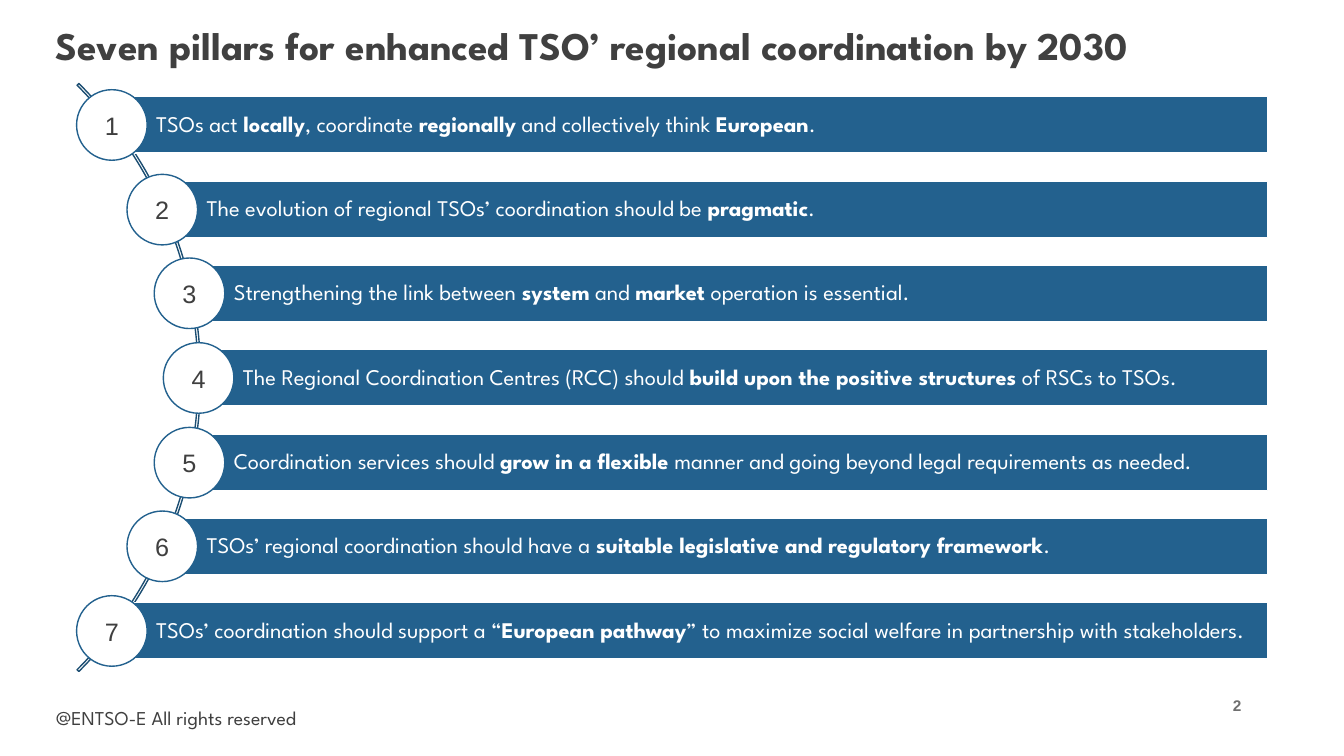
from dataclasses import dataclass
from math import sqrt

from pptx import Presentation
from pptx.dml.color import RGBColor
from pptx.enum.shapes import MSO_SHAPE
from pptx.enum.text import MSO_ANCHOR, MSO_AUTO_SIZE, PP_ALIGN
from pptx.util import Emu, Pt

SCALE = 9144  # EMU in one px, 100 px to the inch


@dataclass(frozen=True)
class Theme:
    blue: str = "23618E"
    navy: str = "1C4E72"
    white: str = "FFFFFF"
    ink: str = "404040"
    dark: str = "3F3F3F"
    gray: str = "6F6F6F"
    sans: str = "League Spartan"
    plain: str = "Arial"
    title: int = 28
    digit: int = 18
    body: int = 16
    foot: int = 14
    page: int = 11


THEME = Theme()

PILLARS = [
    "TSOs act *locally*, coordinate *regionally* and collectively think *European*.",
    "The evolution of regional TSOs’ coordination should be *pragmatic*.",
    "Strengthening the link between *system* and *market* operation is essential.",
    "The Regional Coordination Centres (RCC) should *build upon the positive structures* of RSCs to TSOs.",
    "Coordination services should *grow in a flexible* manner and going beyond legal requirements as needed.",
    "TSOs’ regional coordination should have a *suitable legislative and regulatory framework*.",
    "TSOs’ coordination should support a “*European pathway*” to maximize social welfare in partnership with stakeholders.",
]


def px(num):
    return Emu(round(num) * SCALE)


def write(shape, words, size, color, font=THEME.sans, bold=False,
          align=PP_ALIGN.LEFT, anchor=MSO_ANCHOR.TOP, pad=(10, 5, 10, 5),
          space=1.0):
    """Fill a shape with one paragraph; parts between stars turn bold."""
    frame = shape.text_frame
    frame.word_wrap = True
    frame.auto_size = MSO_AUTO_SIZE.NONE
    frame.vertical_anchor = anchor
    (frame.margin_left, frame.margin_top,
     frame.margin_right, frame.margin_bottom) = map(px, pad)
    para = frame.paragraphs[0]
    para.alignment = align
    para.line_spacing = space
    for i, part in enumerate(words.split("*")):
        run = para.add_run()
        run.text = part
        run.font.name = font
        run.font.size = Pt(size)
        run.font.bold = bold or i % 2 == 1
        run.font.color.rgb = RGBColor.from_string(color)


def draw(slide, kind, box, line, fill=None):
    shape = slide.shapes.add_shape(kind, *map(px, box))
    shape.shadow.inherit = False
    if fill:
        shape.fill.solid()
        shape.fill.fore_color.rgb = RGBColor.from_string(fill)
    else:
        shape.fill.background()
    shape.line.color.rgb = RGBColor.from_string(line)
    shape.line.width = Pt(1)
    return shape


def head(slide, box):
    title = slide.shapes.title
    title.left, title.top, title.width, title.height = map(px, box)
    write(title, "Seven pillars for enhanced TSO’ regional coordination by 2030",
          THEME.title, THEME.ink, bold=True)


def pillars(slide, box):
    """Rows of bars whose numbered discs follow an arc."""
    left, top, width, height = box
    bar, disc, arc, bend = 56, 70, 825, 410
    mid = top + height / 2
    hub = left + disc / 2 - 324  # centre of the arc

    # Arc behind the rows
    curve = draw(slide, MSO_SHAPE.BLOCK_ARC,
                 (hub - arc / 2, mid - arc / 2, arc, arc), THEME.navy)
    for i, value in enumerate((189, 27, 0.003)):
        curve.adjustments[i] = value

    # Bars and discs
    step = (height - disc) / (len(PILLARS) - 1)
    for i, words in enumerate(PILLARS):
        y = top + disc / 2 + i * step
        x = hub + sqrt(bend ** 2 - (y - mid) ** 2)
        strip = draw(slide, MSO_SHAPE.RECTANGLE,
                     (x, y - bar / 2, left + width - x, bar),
                     THEME.white, THEME.blue)
        write(strip, words, THEME.body, THEME.white, space=0.9,
              anchor=MSO_ANCHOR.MIDDLE, pad=(44, 4, 4, 4))
        badge = draw(slide, MSO_SHAPE.OVAL,
                     (x - disc / 2, y - disc / 2, disc, disc),
                     THEME.blue, THEME.white)
        write(badge, str(i + 1), THEME.digit, THEME.dark, font=THEME.plain,
              align=PP_ALIGN.CENTER, anchor=MSO_ANCHOR.MIDDLE, pad=(0, 0, 0, 0))


def foot(slide, box):
    left, top, width, height = box
    note = slide.shapes.add_textbox(*map(px, (left, top + 13, 426, height - 13)))
    write(note, "@ENTSO-E All rights reserved", THEME.foot, THEME.dark)
    page = slide.shapes.add_textbox(*map(px, (left + width - 49, top, 49, 35)))
    write(page, "2", THEME.page, THEME.gray, font=THEME.plain, bold=True,
          anchor=MSO_ANCHOR.MIDDLE)


def main():
    deck = Presentation()
    deck.slide_width, deck.slide_height = px(1333), px(750)
    slide = deck.slides.add_slide(deck.slide_layouts[5])
    head(slide, (45, 16, 1220, 77))
    pillars(slide, (76, 89, 1181, 572))
    foot(slide, (46, 682, 1216, 47))
    deck.save("out.pptx")


if __name__ == "__main__":
    main()
